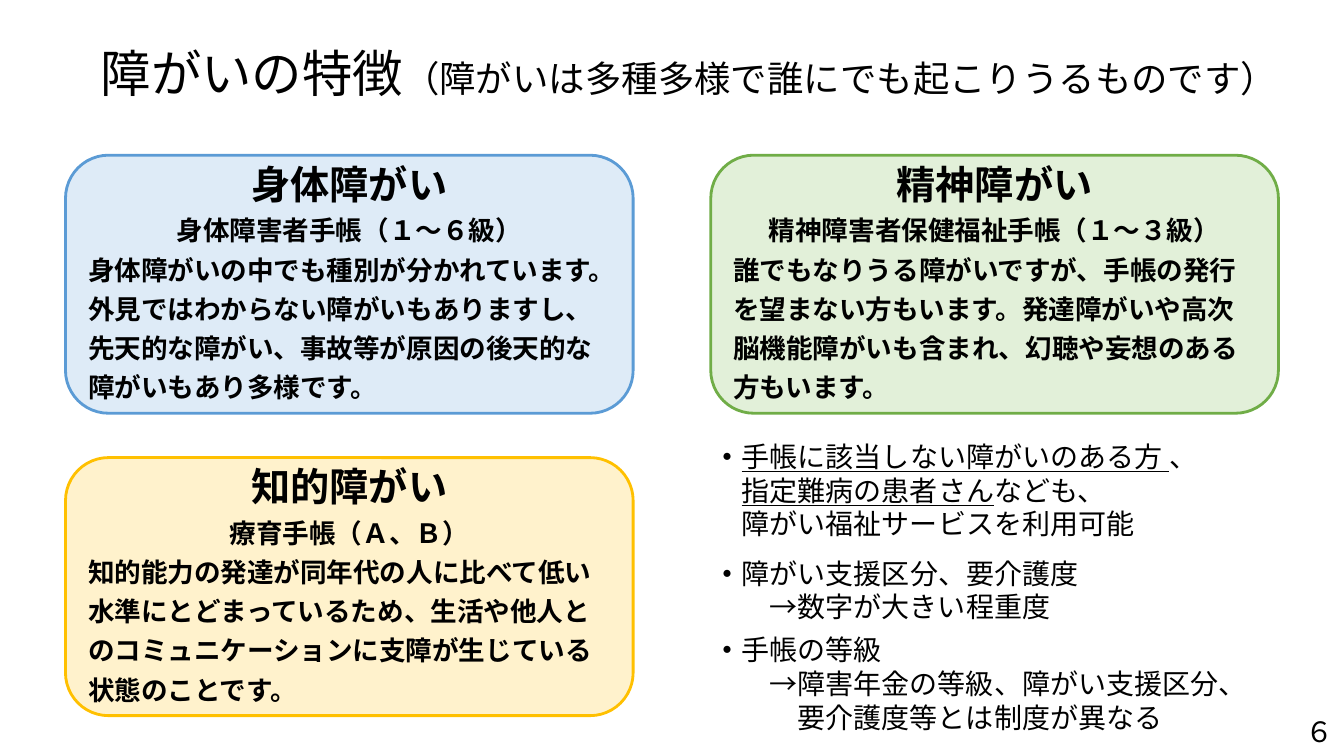
from lxml import etree
from pptx import Presentation
from pptx.dml.color import RGBColor
from pptx.enum import lang, shapes, text
from pptx.oxml import ns
from pptx.util import Inches, Pt

FONT = "Noto Sans CJK JP"
COLORS = {
    "text": "000000",
    "blue_fill": "DEEBF7", "blue_line": "5B9BD5",
    "yellow_fill": "FFF2CC", "yellow_line": "FFC000",
    "green_fill": "E2F0D9", "green_line": "70AD47",
}
CARDS = [
    (0.65, 1.54, "blue", "身体障がい", "身体障害者手帳（１～６級）",
     "身体障がいの中でも種別が分かれています。外見ではわからない障がいもありますし、"
     "先天的な障がい、事故等が原因の後天的な障がいもあり多様です。"),
    (0.65, 4.54, "yellow", "知的障がい", "療育手帳（Ａ、Ｂ）",
     "知的能力の発達が同年代の人に比べて低い水準にとどまっているため、"
     "生活や他人とのコミュニケーションに支障が生じている状態のことです。"),
    (7.05, 1.54, "green", "精神障がい", "精神障害者保健福祉手帳（１～３級）",
     "誰でもなりうる障がいですが、手帳の発行を望まない方もいます。"
     "発達障がいや高次脳機能障がいも含まれ、幻聴や妄想のある方もいます。"),
]
NOTES = [
    (4.31, 5.21, 1.11, [
        (0, [("・", "b"), ("手帳に該当しない障がいのある方", "u"), (" ", "bu"), ("、", "")]),
        (1, [("指定難病の患者さん", "u"), ("なども、", "")]),
        (1, [("障がい福祉サービスを利用可能", "")]),
    ]),
    (5.47, 3.85, 0.77, [
        (0, [("・", "b"), ("障がい支援区分、要介護度", "")]),
        (2, [("→数字が大きい程重度", "")]),
    ]),
    (6.23, 5.53, 1.11, [
        (0, [("・", "b"), ("手帳の等級", "")]),
        (2, [("→障害年金の等級、障がい支援区分、", "")]),
        (3, [("要介護度等とは制度が異なる", "")]),
    ]),
]


def color(name):
    return RGBColor.from_string(COLORS[name])


def style_span(span, size, bold=False, underline=False):
    font = span.font
    font.size = Pt(size)
    font.bold = bold
    font.underline = underline
    font.color.rgb = color("text")
    font.name = FONT
    font.language_id = lang.MSO_LANGUAGE_ID.JAPANESE
    east_asian = etree.SubElement(span._r.get_or_add_rPr(), ns.qn("a:ea"))
    east_asian.set("typeface", FONT)


def add_span(para, words, size, marks=""):
    span = para.add_run()
    span.text = words
    style_span(span, size, "b" in marks, "u" in marks)


def add_text_box(page, left, top, width, height, wrap=True):
    box = page.shapes.add_textbox(Inches(left), Inches(top), Inches(width), Inches(height))
    box.text_frame.word_wrap = wrap
    return box.text_frame


def add_title(page):
    frame = add_text_box(page, 0.9, 0.19, 12.16, 1.14)
    frame.vertical_anchor = text.MSO_ANCHOR.MIDDLE
    para = frame.paragraphs[0]
    para.line_spacing = 0.9
    add_span(para, "障がいの特徴", 36)
    add_span(para, "（障がいは多種多様で誰にでも起こりうるものです）", 26)


def add_card(page, left, top, hue, heading, handbook, description):
    card = page.shapes.add_shape(shapes.MSO_SHAPE.ROUNDED_RECTANGLE,
                                 Inches(left), Inches(top), Inches(5.63), Inches(2.56))
    card.shadow.inherit = False
    card.fill.solid()
    card.fill.fore_color.rgb = color(hue + "_fill")
    card.line.color.rgb = color(hue + "_line")
    card.line.width = Pt(2)
    frame = card.text_frame
    frame.word_wrap = True
    frame.vertical_anchor = text.MSO_ANCHOR.TOP
    frame.margin_top = frame.margin_bottom = 0
    frame.text = "\n".join([heading, handbook, description])
    center, left_side = text.PP_ALIGN.CENTER, text.PP_ALIGN.LEFT
    for para, size, align in zip(frame.paragraphs, (28, 19, 19), (center, center, left_side)):
        para.alignment = align
        para.line_spacing = Pt(28)
        style_span(para.runs[0], size, bold=True)


def add_note(page, top, width, height, lines):
    frame = add_text_box(page, 6.98, top, width, height)
    for index, (indent, spans) in enumerate(lines):
        para = frame.add_paragraph() if index else frame.paragraphs[0]
        para.line_spacing = Pt(24)
        para._p.get_or_add_pPr().set("marL", str(Pt(20 * indent)))
        for words, marks in spans:
            add_span(para, words, 20, marks)


def add_page_number(page):
    frame = add_text_box(page, 12.85, 7.04, 0.48, 0.44, wrap=False)
    para = frame.paragraphs[0]
    para.line_spacing = Pt(24)
    add_span(para, "６", 20)


def main():
    deck = Presentation()
    deck.slide_width, deck.slide_height = Inches(13.33), Inches(7.5)
    page = deck.slides.add_slide(deck.slide_layouts[6])
    add_title(page)
    for card in CARDS:
        add_card(page, *card)
    for note in NOTES:
        add_note(page, *note)
    add_page_number(page)
    deck.save("out.pptx")


if __name__ == "__main__":
    main()
